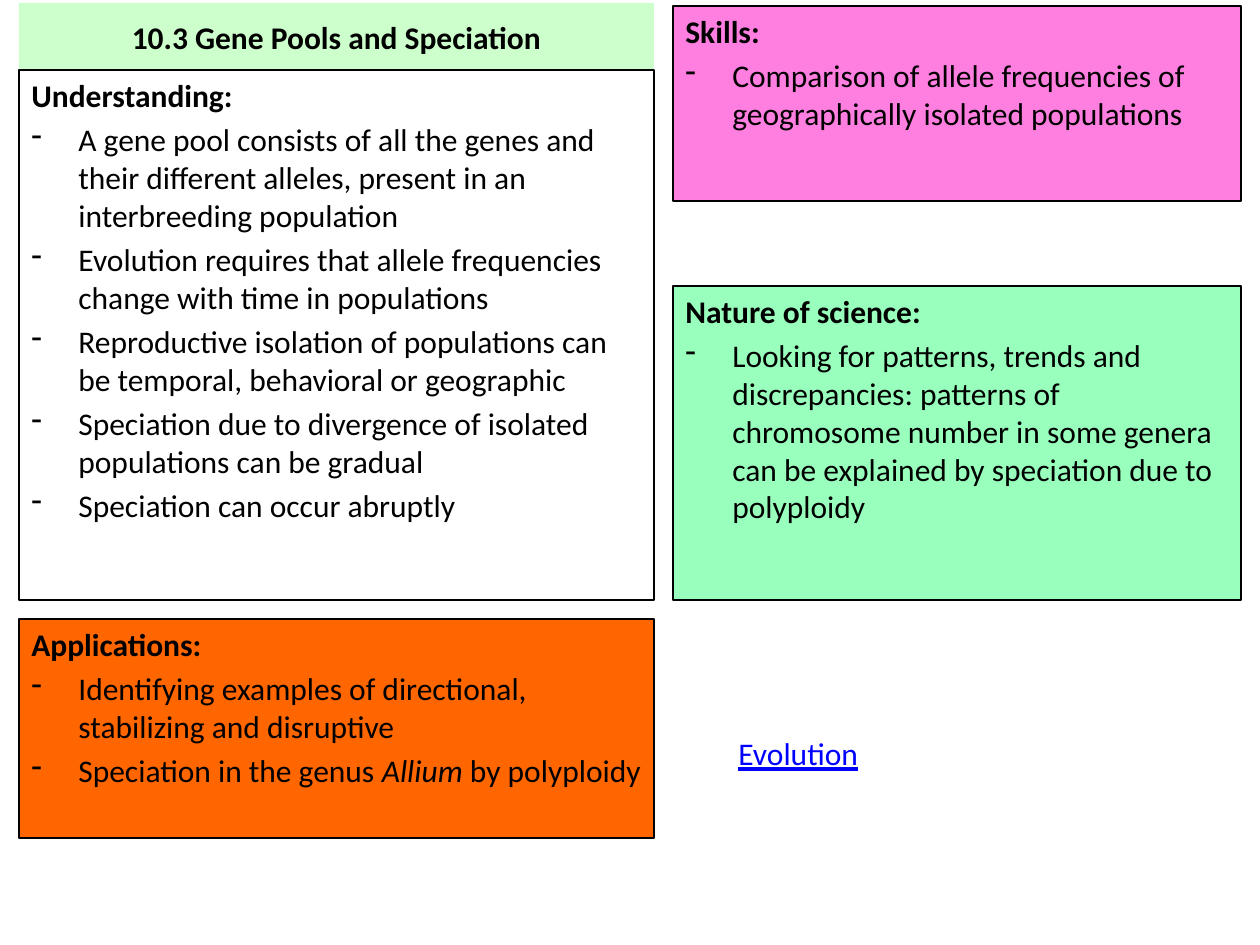
from lxml.etree import SubElement
from pptx import Presentation
from pptx.dml.color import RGBColor
from pptx.enum.shapes import MSO_SHAPE as Shape
from pptx.enum.text import MSO_ANCHOR as Anchor, PP_ALIGN as Align
from pptx.oxml.ns import qn
from pptx.util import Pt

BLACK = RGBColor(0x00, 0x00, 0x00)
BLUE = RGBColor(0x00, 0x00, 0xFF)
MINT = RGBColor(0xCC, 0xFF, 0xCC)
PINK = RGBColor(0xFF, 0x7F, 0xE1)
GREEN = RGBColor(0x98, 0xFF, 0xBC)
ORANGE = RGBColor(0xFF, 0x66, 0x00)
SCALE = 914400 / 126

LEFT, LEFT_WIDTH = 19, 635
RIGHT, RIGHT_WIDTH = 673, 568

PANELS = [
    ((LEFT, 70, LEFT_WIDTH, 530), None, "Understanding:", [
        "A gene pool consists of all the genes and their different alleles, present in an interbreeding population",
        "Evolution requires that allele frequencies change with time in populations",
        "Reproductive isolation of populations can be temporal, behavioral or geographic",
        "Speciation due to divergence of isolated populations can be gradual",
        "Speciation can occur abruptly",
    ]),
    ((RIGHT, 6, RIGHT_WIDTH, 195), PINK, "Skills:", [
        "Comparison of allele frequencies of geographically isolated populations",
    ]),
    ((RIGHT, 286, RIGHT_WIDTH, 314), GREEN, "Nature of science:", [
        "Looking for patterns, trends and discrepancies: patterns of chromosome number "
        "in some genera can be explained by speciation due to polyploidy",
    ]),
    ((LEFT, 619, LEFT_WIDTH, 219), ORANGE, "Applications:", [
        "Identifying examples of directional, stabilizing and disruptive",
        "Speciation in the genus *Allium *by polyploidy",
    ]),
]


def px(length):
    """Turn pixels into EMU."""
    return round(length * SCALE)


def add_span(para, text, color=BLACK, bold=False, italic=False, underline=False):
    """Add a run of text with its format."""
    span = para.add_run()
    span.text = text
    font = span.font
    font.name, font.size = "Calibri", Pt(18)
    font.bold, font.italic, font.underline = bold, italic, underline
    font.color.rgb = color


class StudyPage:
    """Hold the page and its style, and add each kind of element."""

    indent = 47
    gap = Pt(3.6)
    border = Pt(0.75)

    def __init__(self, deck):
        """Start a title-only page."""
        self.page = deck.slides.add_slide(deck.slide_layouts[5])

    def title(self, frame, text, fill):
        """Place and format the title placeholder."""
        box = self.page.shapes.title
        box.left, box.top, box.width, box.height = map(px, frame)
        box.fill.solid()
        box.fill.fore_color.rgb = fill
        box.text_frame.vertical_anchor = Anchor.MIDDLE
        para = box.text_frame.paragraphs[0]
        para.alignment = Align.CENTER
        add_span(para, text, bold=True)

    def panel(self, frame, fill, heading, items):
        """Add a bordered box with a heading and dashed items."""
        box = self.page.shapes.add_shape(Shape.RECTANGLE, *map(px, frame))
        box.shadow.inherit = False
        if fill is None:
            box.fill.background()
        else:
            box.fill.solid()
            box.fill.fore_color.rgb = fill
        box.line.color.rgb = BLACK
        box.line.width = self.border
        text_frame = box.text_frame
        text_frame.word_wrap = True
        text_frame.vertical_anchor = Anchor.TOP
        para = text_frame.paragraphs[0]
        para.alignment, para.space_before = Align.LEFT, self.gap
        add_span(para, heading, bold=True)
        for item in items:
            self.bullet(text_frame.add_paragraph(), item)

    def bullet(self, para, text):
        """Fill a dashed paragraph, with starred parts in italics."""
        para.alignment, para.space_before = Align.LEFT, self.gap
        properties = para._p.get_or_add_pPr()
        properties.set("marL", str(px(self.indent)))
        properties.set("indent", str(-px(self.indent)))
        SubElement(properties, qn("a:buChar")).set("char", "-")
        for index, part in enumerate(text.split("*")):
            add_span(para, part, italic=index % 2 == 1)

    def label(self, frame, text, **style):
        """Add a plain line of text."""
        box = self.page.shapes.add_textbox(*map(px, frame))
        box.text_frame.word_wrap = True
        add_span(box.text_frame.paragraphs[0], text, **style)


def main():
    """Build and save the deck."""
    deck = Presentation()
    deck.slide_width, deck.slide_height = px(1260), px(945)
    page = StudyPage(deck)
    page.title((LEFT, 3, LEFT_WIDTH, 67), "10.3 Gene Pools and Speciation", MINT)
    for panel in PANELS:
        page.panel(*panel)
    page.label((726, 728, 630, 50), "Evolution", color=BLUE, underline=True)
    deck.save("out.pptx")


if __name__ == "__main__":
    main()
